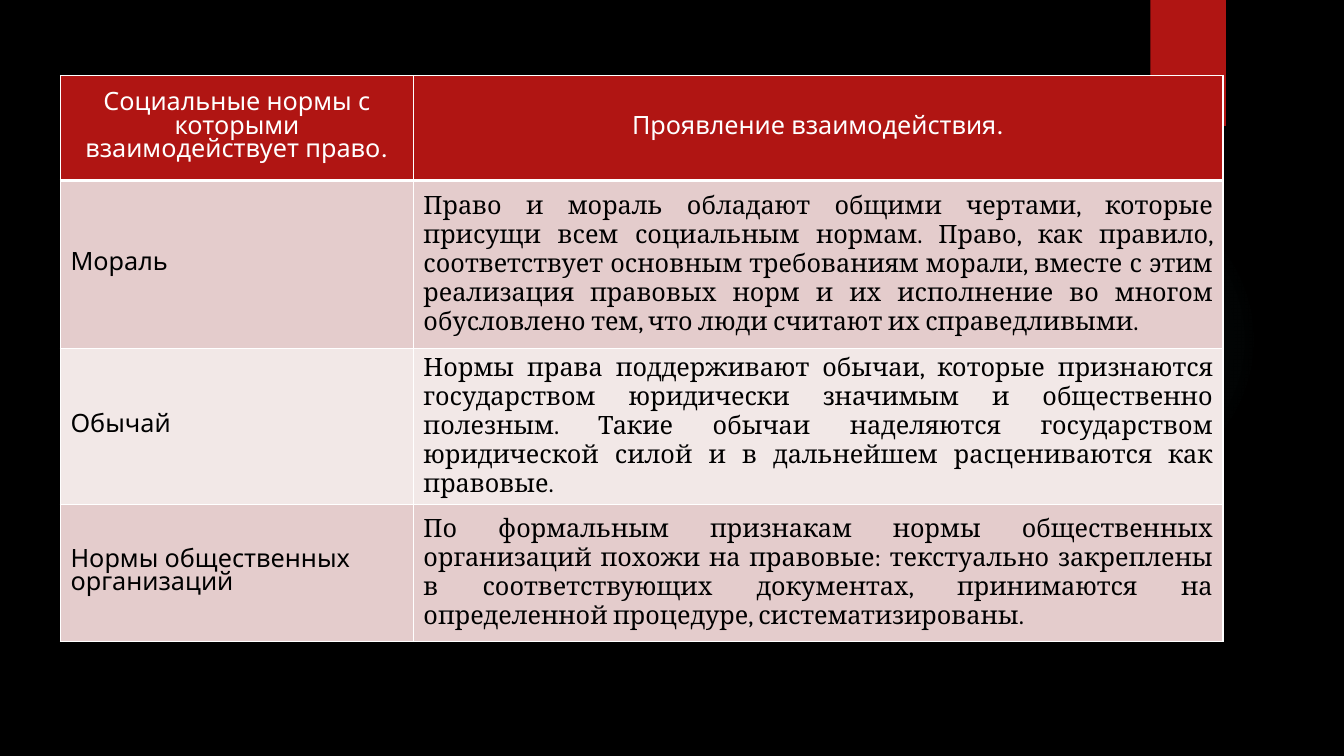
from lxml import etree
from pptx import Presentation
from pptx.dml.color import RGBColor
from pptx.enum.shapes import MSO_SHAPE
from pptx.enum.text import MSO_ANCHOR, PP_ALIGN
from pptx.oxml import parse_xml
from pptx.oxml.ns import qn
from pptx.util import Inches, Pt

OVAL, RECT = MSO_SHAPE.OVAL, MSO_SHAPE.RECTANGLE
MIDDLE = MSO_ANCHOR.MIDDLE
LEFT, CENTER, JUSTIFY = PP_ALIGN.LEFT, PP_ALIGN.CENTER, PP_ALIGN.JUSTIFY
NS = "http://schemas.openxmlformats.org/drawingml/2006/main"
RED = "B01513"
SANS, SERIF = "League Spartan", "Cambria"


def paint(fill, color):
    fill.solid()
    fill.fore_color.rgb = RGBColor.from_string(color)


def edge(cell, side, width):
    line = etree.SubElement(cell._tc.get_or_add_tcPr(), qn("a:ln" + side), w=str(Pt(width)))
    solid = etree.SubElement(line, qn("a:solidFill"))
    etree.SubElement(solid, qn("a:srgbClr"), val="FFFFFF")


prs = Presentation()
prs.slide_width, prs.slide_height = Inches(13.33), Inches(7.5)
slide = prs.slides.add_slide(prs.slide_layouts[6])
paint(slide.background.fill, "000000")

glow = slide.shapes.add_shape(OVAL, Inches(9.41), Inches(1.83), Inches(3.08), Inches(3.08))
glow.shadow.inherit = False
glow.line.fill.background()
glow.fill.background()
stops = "".join(
    f'<a:gs pos="{pos * 1000}"><a:srgbClr val="50B9C1"><a:alpha val="{alpha * 1000}"/></a:srgbClr></a:gs>'
    for pos, alpha in ((0, 7), (36, 6), (69, 0), (100, 0))
)
shade = parse_xml(
    f'<a:gradFill xmlns:a="{NS}"><a:gsLst>{stops}</a:gsLst><a:path path="circle">'
    '<a:fillToRect l="50000" t="50000" r="50000" b="50000"/></a:path></a:gradFill>'
)
props = glow._element.spPr
props.replace(props.find(qn("a:noFill")), shade)

tab = slide.shapes.add_shape(RECT, Inches(11.41), 0, Inches(0.75), Inches(1.25))
tab.shadow.inherit = False
tab.line.fill.background()
paint(tab.fill, RED)

rows = [
    ("Социальные нормы с которыми взаимодействует право.", "Проявление взаимодействия."),
    ("Мораль",
     "Право и мораль обладают общими чертами, которые присущи всем социальным нормам. "
     "Право, как правило, соответствует основным требованиям морали, вместе с этим "
     "реализация правовых норм и их исполнение во многом обусловлено тем, что люди "
     "считают их справедливыми."),
    ("Обычай",
     "Нормы права поддерживают обычаи, которые признаются государством юридически "
     "значимым и общественно полезным. Такие обычаи наделяются государством юридической "
     "силой и в дальнейшем расцениваются как правовые."),
    ("Нормы общественных организаций",
     "По формальным признакам нормы общественных организаций похожи на правовые: "
     "текстуально закреплены в соответствующих документах, принимаются на определенной "
     "процедуре, систематизированы."),
]
fills = [RED, "E4CCCC", "F2E8E7", "E4CCCC"]
highs = [1.04, 1.67, 1.36, 1.36]
wides = [3.5, 8.03]

table = slide.shapes.add_table(
    len(rows), len(wides), Inches(0.6), Inches(0.75), Inches(sum(wides)), Inches(sum(highs))
).table
for col, wide in zip(table.columns, wides):
    col.width = Inches(wide)

for r, texts in enumerate(rows):
    table.rows[r].height = Inches(highs[r])
    for c, text in enumerate(texts):
        cell = table.cell(r, c)
        for side in "LRTB":
            thick = (r == 0 and side == "B") or (r == 1 and side == "T")
            edge(cell, side, 3 if thick else 1)
        paint(cell.fill, fills[r])
        cell.vertical_anchor = MIDDLE
        cell.text_frame.text = text
        para = cell.text_frame.paragraphs[0]
        para.alignment = CENTER if r == 0 else (LEFT, JUSTIFY)[c]
        font = para.runs[0].font
        font.name = SERIF if r and c else SANS
        font.size = Pt(18)
        font.bold = False
        paint(font.fill, "000000" if r else "FFFFFF")

prs.save("out.pptx")
